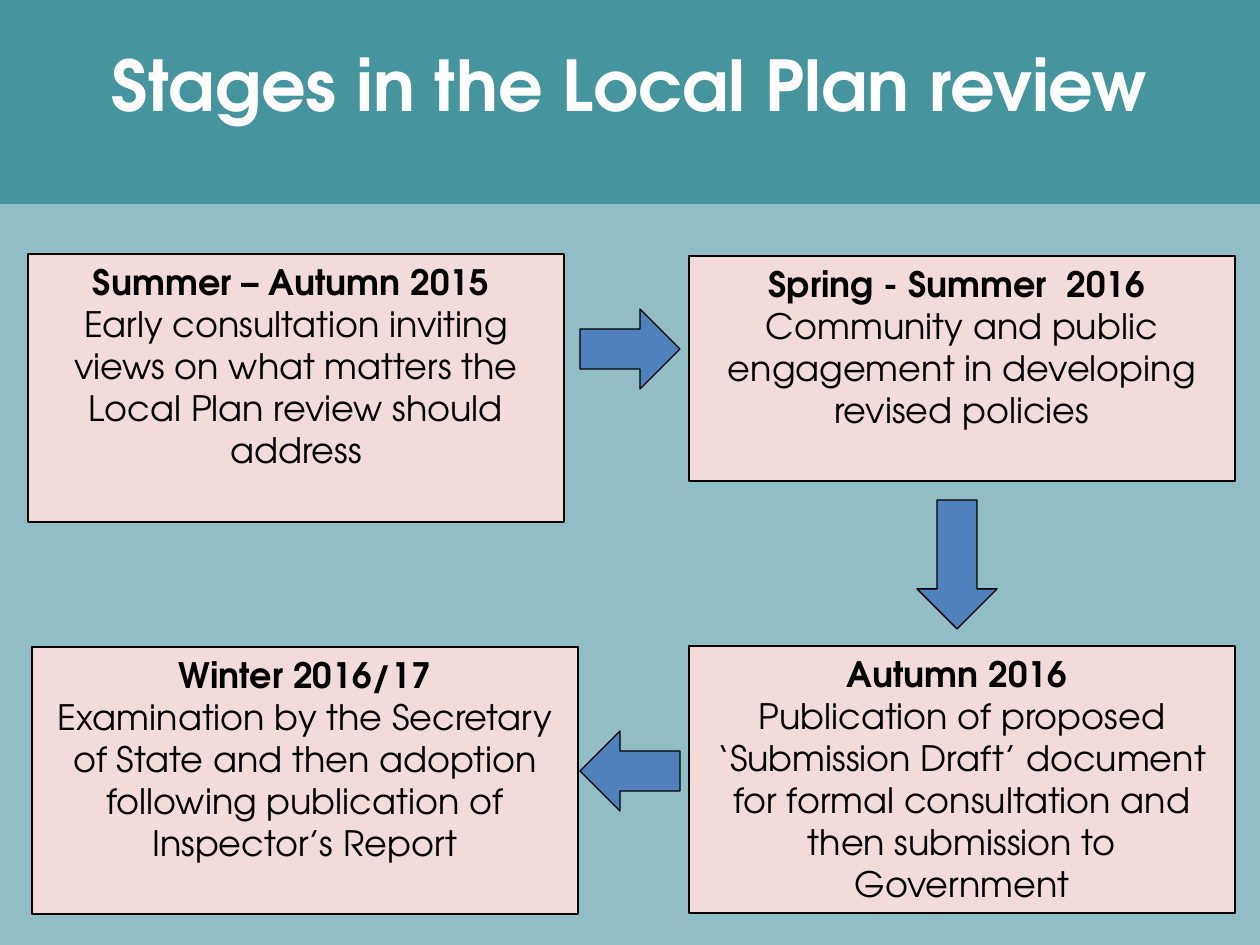
from pptx import Presentation
from pptx.dml.color import RGBColor
from pptx.enum.shapes import MSO_SHAPE
from pptx.enum.text import MSO_ANCHOR, PP_ALIGN
from pptx.oxml.ns import qn
from pptx.util import Emu, Pt
from lxml import etree

RECTANGLE = MSO_SHAPE.RECTANGLE
RIGHT_ARROW = MSO_SHAPE.RIGHT_ARROW
DOWN_ARROW = MSO_SHAPE.DOWN_ARROW
LEFT_ARROW = MSO_SHAPE.LEFT_ARROW
TOP = MSO_ANCHOR.TOP
CENTER = PP_ALIGN.CENTER

TEAL = RGBColor(0x46, 0x94, 0x9D)
PINK = RGBColor(0xF2, 0xDC, 0xDB)
BLUE = RGBColor(0x4F, 0x81, 0xBD)
BLACK = RGBColor(0, 0, 0)
WHITE = RGBColor(255, 255, 255)

FONT = "TeX Gyre Adventor"
EMU_PER_PX = 914400 / 126


def px(*lengths):
    return [Emu(round(length * EMU_PER_PX)) for length in lengths]


def add_filled(kind, bounds, color, outlined=True):
    shape = slide.shapes.add_shape(kind, *px(*bounds))
    shape.shadow.inherit = False
    shape.fill.solid()
    shape.fill.fore_color.rgb = color
    if outlined:
        shape.line.color.rgb = BLACK
        shape.line.width = Pt(0.75)
    else:
        shape.line.fill.background()
    return shape


presentation = Presentation()
presentation.slide_width, presentation.slide_height = px(1260, 945)
slide = presentation.slides.add_slide(presentation.slide_layouts[6])

backdrop = add_filled(RECTANGLE, (0, 185, 1260, 760), TEAL, outlined=False)
backdrop_color = backdrop.element.spPr.find(qn("a:solidFill")).find(qn("a:srgbClr"))
etree.SubElement(backdrop_color, qn("a:alpha"), val="60000")
add_filled(RECTANGLE, (0, 0, 1260, 204), TEAL, outlined=False)

title = slide.shapes.add_textbox(*px(0, 35, 1260, 97))
title.text_frame.word_wrap = True
paragraph = title.text_frame.paragraphs[0]
paragraph.text = "Stages in the Local Plan review"
paragraph.alignment = CENTER
paragraph.font.name = FONT
paragraph.font.size = Pt(40)
paragraph.font.bold = True
paragraph.font.color.rgb = WHITE

stages = [
    ((28, 254, 536, 268), "Summer – Autumn 2015 ",
     "Early consultation inviting views on what matters the Local Plan review should address"),
    ((689, 256, 546, 225), "Spring - Summer  2016 ",
     "Community and public engagement in developing revised policies"),
    ((689, 646, 546, 267), "Autumn 2016 ",
     "Publication of proposed ‘Submission Draft’ document for formal consultation "
     "and then submission to Government"),
    ((32, 647, 546, 267), "Winter 2016/17",
     "Examination by the Secretary of State and then adoption following publication "
     "of Inspector’s Report"),
]
for bounds, period, activity in stages:
    box = add_filled(RECTANGLE, bounds, PINK)
    text_frame = box.text_frame
    text_frame.word_wrap = True
    text_frame.vertical_anchor = TOP
    text_frame.text = f"{period}\n{activity}"
    for paragraph, bold in zip(text_frame.paragraphs, (True, False)):
        paragraph.alignment = CENTER
        paragraph.font.name = FONT
        paragraph.font.size = Pt(20)
        paragraph.font.bold = bold
        paragraph.font.color.rgb = BLACK

arrows = [
    (RIGHT_ARROW, (580, 309, 100, 80)),
    (DOWN_ARROW, (917, 500, 80, 129)),
    (LEFT_ARROW, (580, 731, 100, 80)),
]
for kind, bounds in arrows:
    add_filled(kind, bounds, BLUE)

presentation.save("out.pptx")
